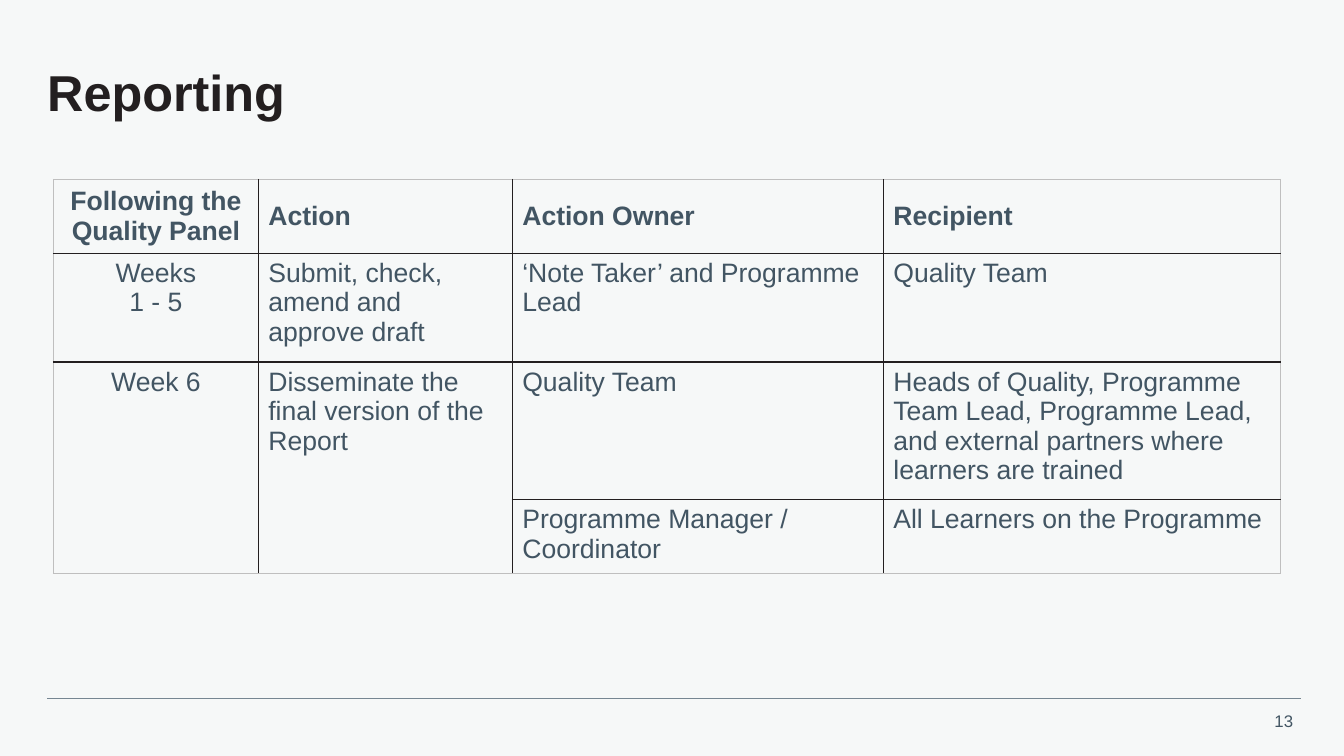
from dataclasses import dataclass

from lxml.etree import SubElement
from pptx import Presentation
from pptx.dml.color import RGBColor
from pptx.enum.shapes import MSO_CONNECTOR, MSO_SHAPE
from pptx.enum.text import MSO_ANCHOR, PP_ALIGN
from pptx.oxml.ns import qn
from pptx.util import Cm, Pt


@dataclass(frozen=True)
class Theme:
    font: str = "Arial"
    background: str = "F6F8F8"
    title: str = "231F20"
    body: str = "425563"
    rule: str = "768692"
    inner_border: str = "231F20"
    outer_border: str = "BFBFBF"
    title_size: int = 36
    table_size: int = 19
    number_size: int = 12


class SlideBuilder:
    def __init__(self, slide, theme):
        self.slide = slide
        self.theme = theme

    def style(self, paragraph, size, color, bold=False, align=PP_ALIGN.LEFT):
        paragraph.alignment = align
        font = paragraph.font
        font.name = self.theme.font
        font.size = Pt(size)
        font.bold = bold
        font.color.rgb = RGBColor.from_string(color)

    def background(self, width, height):
        shape = self.slide.shapes.add_shape(MSO_SHAPE.RECTANGLE, 0, 0, width, height)
        shape.shadow.inherit = False
        shape.fill.solid()
        shape.fill.fore_color.rgb = RGBColor.from_string(self.theme.background)
        shape.line.fill.background()

    def rule(self, left, right, top):
        line = self.slide.shapes.add_connector(
            MSO_CONNECTOR.STRAIGHT, Cm(left), Cm(top), Cm(right), Cm(top))
        line.line.color.rgb = RGBColor.from_string(self.theme.rule)
        line.line.width = Pt(0.5)
        SubElement(line._element.spPr, qn("a:effectLst"))

    def title(self, text, left, top, width, height):
        box = self.slide.shapes.add_textbox(Cm(left), Cm(top), Cm(width), Cm(height))
        frame = box.text_frame
        frame.word_wrap = True
        frame.vertical_anchor = MSO_ANCHOR.MIDDLE
        frame.margin_left = frame.margin_right = frame.margin_top = frame.margin_bottom = 0
        paragraph = frame.paragraphs[0]
        paragraph.text = text
        paragraph.line_spacing = 0.9
        self.style(paragraph, self.theme.title_size, self.theme.title, bold=True)

    def page_number(self, text, left, top, width, height):
        box = self.slide.shapes.add_textbox(Cm(left), Cm(top), Cm(width), Cm(height))
        paragraph = box.text_frame.paragraphs[0]
        paragraph.text = text
        self.style(paragraph, self.theme.number_size, self.theme.body, align=PP_ALIGN.RIGHT)

    def borders(self, cell, outer_sides):
        properties = cell._tc.get_or_add_tcPr()
        for side in "LRTB":
            if side == "T" and cell.is_spanned:
                continue
            color = self.theme.outer_border if side in outer_sides else self.theme.inner_border
            line = SubElement(properties, qn(f"a:ln{side}"), w=str(Pt(1)))
            fill = SubElement(line, qn("a:solidFill"))
            SubElement(fill, qn("a:srgbClr"), val=color)

    def table(self, rows, left, top, widths, heights, merges):
        frame = self.slide.shapes.add_table(
            len(heights), len(widths), Cm(left), Cm(top), Cm(sum(widths)), Cm(sum(heights)))
        table = frame.table
        table.first_row = table.horz_banding = False
        for column, width in zip(table.columns, widths):
            column.width = Cm(width)
        for row, height in zip(table.rows, heights):
            row.height = Cm(height)
        for start, end in merges:
            table.cell(*start).merge(table.cell(*end))

        for row_index, texts in enumerate(rows):
            for column_index, text in enumerate(texts):
                cell = table.cell(row_index, column_index)
                span = cell.span_height if cell.is_merge_origin else 1
                edges = {
                    "L": column_index == 0,
                    "R": column_index == len(widths) - 1,
                    "T": row_index == 0,
                    "B": row_index + span == len(heights),
                }
                self.borders(cell, [side for side, is_outer in edges.items() if is_outer])
                cell.fill.background()
                if cell.is_spanned:
                    continue
                is_header = row_index == 0
                cell.vertical_anchor = MSO_ANCHOR.MIDDLE if is_header else MSO_ANCHOR.TOP
                cell.text = text
                align = PP_ALIGN.CENTER if column_index == 0 else PP_ALIGN.LEFT
                for paragraph in cell.text_frame.paragraphs:
                    self.style(paragraph, self.theme.table_size, self.theme.body,
                               bold=is_header, align=align)


REPORTING_STEPS = [
    ["Following the Quality Panel", "Action", "Action Owner", "Recipient"],
    ["Weeks\n1 - 5", "Submit, check, amend and approve draft",
     "‘Note Taker’ and Programme Lead", "Quality Team"],
    ["Week 6", "Disseminate the final version of the Report", "Quality Team",
     "Heads of Quality, Programme Team Lead, Programme Lead, "
     "and external partners where learners are trained"],
    ["", "", "Programme Manager / Coordinator", "All Learners on the Programme"],
]


def main():
    presentation = Presentation()
    presentation.slide_width = Cm(33.87)
    presentation.slide_height = Cm(19.05)
    slide = presentation.slides.add_slide(presentation.slide_layouts[6])
    builder = SlideBuilder(slide, Theme())

    # Background and footer
    builder.background(presentation.slide_width, presentation.slide_height)
    builder.page_number("13", 31.8, 17.78, 1.04, 0.76)
    builder.rule(1.19, 32.79, 17.6)

    # Title
    builder.title("Reporting", 1.19, 1.19, 31.67, 2.41)

    # Reporting timetable, with week 6 spanning two rows
    builder.table(
        REPORTING_STEPS, 1.35, 4.52,
        widths=[5.16, 6.4, 9.35, 10.01],
        heights=[1.74, 2.74, 3.47, 1.75],
        merges=[((2, column), (3, column)) for column in (0, 1)],
    )

    presentation.save("out.pptx")


if __name__ == "__main__":
    main()
